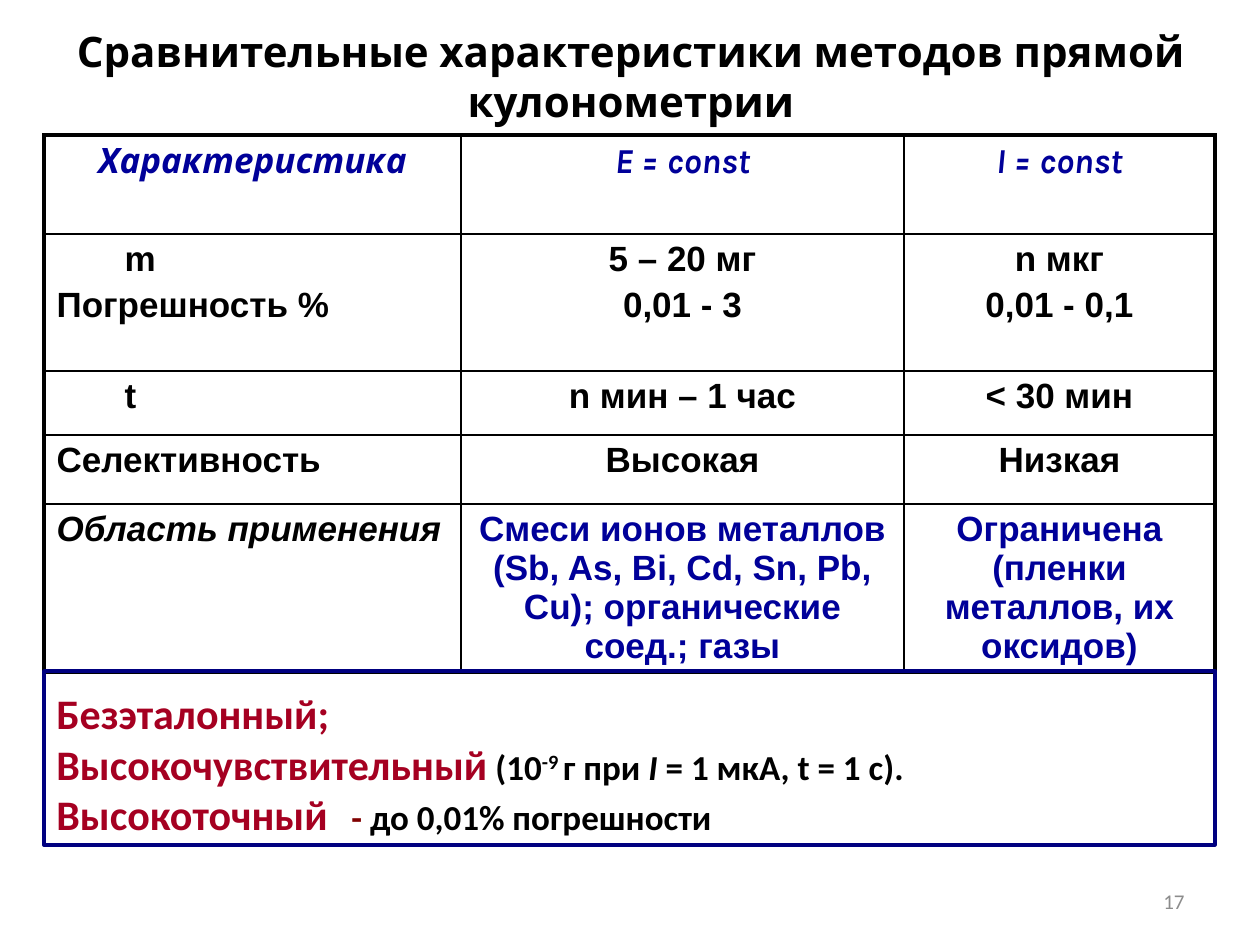
from dataclasses import dataclass

from lxml.etree import SubElement
from pptx import Presentation
from pptx.dml.color import RGBColor
from pptx.enum.shapes import MSO_SHAPE as Shape
from pptx.enum.text import MSO_ANCHOR as Anchor, PP_ALIGN as Align
from pptx.oxml.ns import qn
from pptx.util import Emu, Pt

PX = 7257.14  # EMU in one px, at 126 px to the inch

BLACK = RGBColor(0x00, 0x00, 0x00)
BLUE = RGBColor(0x00, 0x00, 0x99)
NAVY = RGBColor(0x00, 0x00, 0x80)
RED = RGBColor(0xA5, 0x00, 0x21)
MAROON = RGBColor(0x80, 0x00, 0x00)
GREY = RGBColor(0x8C, 0x8C, 0x8C)


@dataclass
class Span:
    text: str
    size: int = 20
    font: str = "Arial"
    color: RGBColor = BLACK
    bold: bool = True
    italic: bool = False
    raised: bool = False


@dataclass
class Para:
    spans: list[Span]
    align: Align = Align.LEFT
    indent: int = 0
    tab: int = 0
    before: int = 0


def px(length: int) -> Emu:
    return Emu(round(length * PX))


def place(shape, left: int, top: int, width: int, height: int) -> None:
    shape.left, shape.top = px(left), px(top)
    shape.width, shape.height = px(width), px(height)


def write(frame, paras: list[Para], anchor: Anchor = Anchor.MIDDLE) -> None:
    frame.word_wrap = True
    frame.vertical_anchor = anchor
    for index, item in enumerate(paras):
        para = frame.paragraphs[0] if index == 0 else frame.add_paragraph()
        para.alignment = item.align
        para.space_before = Pt(item.before)
        properties = para._p.get_or_add_pPr()
        if item.indent:
            properties.set("marL", str(px(item.indent)))
            properties.set("indent", "0")
        if item.tab:
            tabs = SubElement(properties, qn("a:tabLst"))
            SubElement(tabs, qn("a:tab"), pos=str(px(item.tab)), algn="l")
        for span in item.spans:
            run = para.add_run()
            run.text = span.text
            font = run.font
            font.size, font.name = Pt(span.size), span.font
            font.bold, font.italic = span.bold, span.italic
            font.color.rgb = span.color
            if span.raised:
                run._r.get_or_add_rPr().set("baseline", "30000")


def set_border(cell, side: str, points: float) -> None:
    line = SubElement(cell._tc.get_or_add_tcPr(), qn(f"a:ln{side}"), w=str(Pt(points)))
    fill = SubElement(line, qn("a:solidFill"))
    SubElement(fill, qn("a:srgbClr"), val=str(BLACK))


def label(text: str, indent: int = 0, italic: bool = False) -> Para:
    return Para([Span(text, italic=italic)], indent=indent, before=4)


def value(text: str, color: RGBColor = BLACK) -> Para:
    return Para([Span(text, color=color)], Align.CENTER, before=4)


def heading(text: str) -> Para:
    return Para([Span(text, font="Karla", color=BLUE, italic=True)], Align.CENTER)


def note(text: str, size: int = 20, color: RGBColor = BLACK, **style) -> Span:
    return Span(text, size, "Calibri", color, **style)


SYMBOL_INDENT = 68
COLUMNS = [417, 443, 311]
ROWS = [99, 137, 64, 69, 166]
CELLS = [
    [[heading("Характеристика")], [heading("E = const")], [heading("I = const")]],
    [[label("m", SYMBOL_INDENT), label("Погрешность %")],
     [value("5 – 20 мг"), value("0,01 - 3")],
     [value("n мкг"), value("0,01 - 0,1")]],
    [[label("t", SYMBOL_INDENT)], [value("n мин – 1 час")], [value("< 30 мин")]],
    [[label("Селективность")], [value("Высокая")], [value("Низкая")]],
    [[label("Область применения", italic=True)],
     [value("Смеси ионов металлов (Sb, As, Bi, Cd, Sn, Pb, Cu); "
            "органические соед.; газы", BLUE)],
     [value("Ограничена (пленки металлов, их оксидов)", BLUE)]],
]
ADVANTAGES = [
    Para([note("Безэталонный;", 24, RED)]),
    Para([note("Высокочувствительный", 24, RED), note(" (10"), note("-9 ", raised=True),
          note("г при "), note("I", italic=True), note(" = 1 мкА, t = 1 с).")]),
    Para([note("Высокоточный", 24, RED), note("\t- ", color=MAROON),
          note("до 0,01% погрешности")], tab=295),
]


def add_comparison(page) -> None:
    frame = page.shapes.add_table(len(ROWS), len(COLUMNS), px(44), px(135),
                                  px(sum(COLUMNS)), px(sum(ROWS)))
    table = frame.table
    table.first_row = table.horz_banding = False
    for column, width in zip(table.columns, COLUMNS):
        column.width = px(width)
    last_row, last_column = len(ROWS) - 1, len(COLUMNS) - 1
    for r, height in enumerate(ROWS):
        table.rows[r].height = px(height)
        for c, paras in enumerate(CELLS[r]):
            cell = table.cell(r, c)
            # Thick outer frame, thin inner grid
            outer = {"L": c == 0, "R": c == last_column, "T": r == 0, "B": r == last_row}
            for side, thick in outer.items():
                set_border(cell, side, 2.25 if thick else 1)
            cell.fill.background()
            write(cell.text_frame, paras)
            cell.vertical_anchor = Anchor.TOP


def main() -> None:
    deck = Presentation()
    deck.slide_width, deck.slide_height = px(1260), px(945)
    page = deck.slides.add_slide(deck.slide_layouts[5])

    # Title
    title = page.shapes.title
    place(title, 64, 0, 1134, 151)
    write(title.text_frame, [Para([Span(
        "Сравнительные характеристики методов прямой кулонометрии", 24, "Karla")],
        Align.CENTER)])

    # Comparison of the two methods
    add_comparison(page)

    # Advantages box
    box = page.shapes.add_shape(Shape.RECTANGLE, px(44), px(671), px(1171), px(174))
    box.shadow.inherit = False
    box.fill.background()
    box.line.color.rgb = NAVY
    box.line.width = Pt(2)
    write(box.text_frame, ADVANTAGES, Anchor.BOTTOM)

    # Page number
    number = page.shapes.add_textbox(px(903), px(876), px(294), px(50))
    write(number.text_frame, [Para([note("17", 12, GREY, bold=False)], Align.RIGHT)])

    deck.save("out.pptx")


if __name__ == "__main__":
    main()
